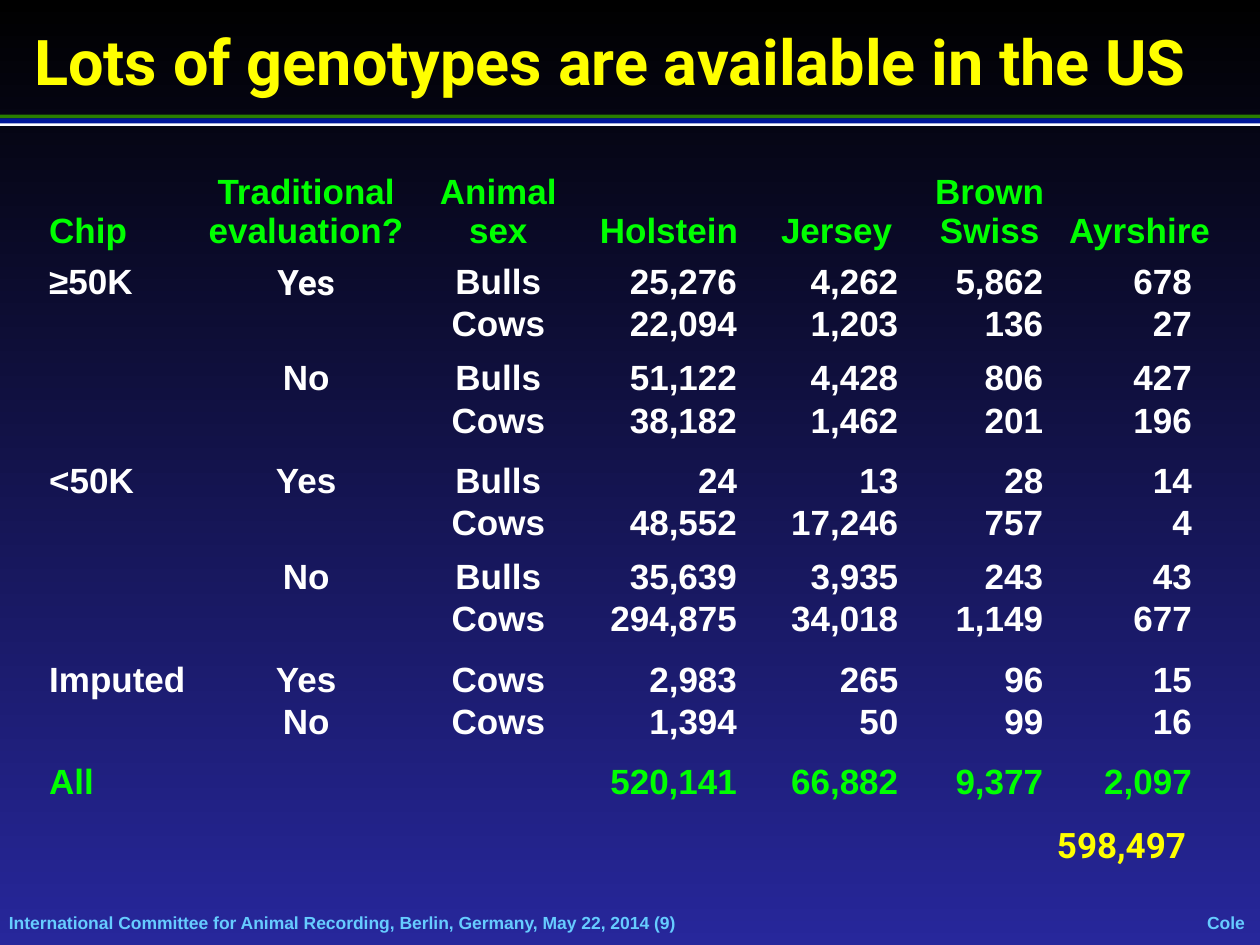
from pptx import Presentation
from pptx.dml.color import RGBColor
from pptx.enum.shapes import MSO_SHAPE
from pptx.enum.text import MSO_ANCHOR, PP_ALIGN
from pptx.util import Inches, Pt

LEFT, CENTER, RIGHT = PP_ALIGN.LEFT, PP_ALIGN.CENTER, PP_ALIGN.RIGHT
TOP, MIDDLE, BOTTOM = MSO_ANCHOR.TOP, MSO_ANCHOR.MIDDLE, MSO_ANCHOR.BOTTOM
RECTANGLE = MSO_SHAPE.RECTANGLE

COLORS = {
    "night": "000000", "indigo": "27279B", "title": "FFFF00", "heading": "00FF00",
    "body": "FFFFFF", "footer": "66CCFF", "green": "2A7E00", "blue": "001799",
}
PLAIN_TABLE = "{2D5ABB26-0587-4C30-8999-92F81FD0307C}"
UNITS_WIDE, UNITS_HIGH = 100, 75

HEADINGS = ["Chip", "Traditional evaluation?", "Animal sex", "Holstein", "Jersey",
            "Brown Swiss", "Ayrshire"]
GENOTYPES = [
    ["≥50K", "Yes", "Bulls", "25,276", "4,262", "5,862", "678"],
    ["", "", "Cows", "22,094", "1,203", "136", "27"],
    ["", "No", "Bulls", "51,122", "4,428", "806", "427"],
    ["", "", "Cows", "38,182", "1,462", "201", "196"],
    ["<50K", "Yes", "Bulls", "24", "13", "28", "14"],
    ["", "", "Cows", "48,552", "17,246", "757", "4"],
    ["", "No", "Bulls", "35,639", "3,935", "243", "43"],
    ["", "", "Cows", "294,875", "34,018", "1,149", "677"],
    ["Imputed", "Yes", "Cows", "2,983", "265", "96", "15"],
    ["", "No", "Cows", "1,394", "50", "99", "16"],
]
TOTALS = ["All", "", "", "520,141", "66,882", "9,377", "2,097"]
COLUMN_WIDTHS = [12.3, 16.2, 14.3, 13.3, 12.8, 12, 11.3]
COLUMN_ALIGNS = [LEFT, CENTER, CENTER, RIGHT, RIGHT, RIGHT, RIGHT]
HEADING_INSETS = [0, 0, 0, 0.5, 0, 0.5, 0]
FIGURE_INSETS = [0, 0, 0, 1.5, 1.5, 2, 1.5]
HEADING_HEIGHT, LINE_HEIGHT = 7.4, 3.3
GAPS_BELOW = [0, 1, 0, 1.5, 0, 1, 0, 1.5, 0, 1.5, 0]


def rgb(name):
    """Look up a palette colour."""
    return RGBColor.from_string(COLORS[name])


def write(frame, text, size=20, color="body", font="Arial", align=LEFT):
    """Fill a text frame with one bold formatted paragraph."""
    paragraph = frame.paragraphs[0]
    paragraph.alignment = align
    run = paragraph.add_run()
    run.text = text
    run.font.size, run.font.name, run.font.bold = Pt(size), font, True
    run.font.color.rgb = rgb(color)


class Deck:
    """Holds the presentation, its grid and the current slide."""

    def __init__(self):
        """Open a presentation with a title-only slide."""
        self.presentation = Presentation()
        self.presentation.slide_width = Inches(10)
        self.presentation.slide_height = Inches(7.5)
        layout = self.presentation.slide_layouts[5]
        self.slide = self.presentation.slides.add_slide(layout)

    def across(self, units):
        """Turn grid columns into a length."""
        return round(self.presentation.slide_width * units / UNITS_WIDE)

    def down(self, units):
        """Turn grid rows into a length."""
        return round(self.presentation.slide_height * units / UNITS_HIGH)

    def box(self, left, top, width, height):
        """Turn a grid box into lengths."""
        return self.across(left), self.down(top), self.across(width), self.down(height)

    def background(self, upper, lower):
        """Shade the slide from top to bottom."""
        fill = self.slide.background.fill
        fill.gradient()
        fill.gradient_angle = 270
        for stop, color in zip(fill.gradient_stops, (upper, lower)):
            stop.color.rgb = rgb(color)

    def title(self, text, place):
        """Move and fill the title placeholder."""
        heading = self.slide.shapes.title
        heading.left, heading.top, heading.width, heading.height = self.box(*place)
        heading.text_frame.vertical_anchor = MIDDLE
        write(heading.text_frame, text, size=36, color="title", font="Roboto")

    def stripe(self, top, height, color):
        """Draw a band across the slide."""
        band = self.slide.shapes.add_shape(RECTANGLE, *self.box(0, top, UNITS_WIDE, height))
        band.shadow.inherit = False
        band.fill.solid()
        band.fill.fore_color.rgb = rgb(color)
        band.line.fill.background()

    def label(self, text, place, inset=True, anchor=TOP, wrap=True, **style):
        """Place a free line of text."""
        frame = self.slide.shapes.add_textbox(*self.box(*place)).text_frame
        frame.word_wrap = wrap
        frame.vertical_anchor = anchor
        if not inset:
            frame.margin_left = frame.margin_right = 0
            frame.margin_top = frame.margin_bottom = 0
        write(frame, text, **style)

    def table(self, rows, left, top, widths, heights):
        """Add a plain table and return its cells by row."""
        place = self.box(left, top, sum(widths), sum(heights))
        grid = self.slide.shapes.add_table(rows, len(widths), *place).table
        grid.first_row = grid.horz_banding = False
        grid._tbl.tblPr[0].text = PLAIN_TABLE
        for column, width in zip(grid.columns, widths):
            column.width = self.across(width)
        for row, height in zip(grid.rows, heights):
            row.height = self.down(height)
        return [list(row.cells) for row in grid.rows]

    def cell(self, cell, text, right=0, bottom=0, anchor=TOP, **style):
        """Format and fill one table cell."""
        cell.fill.background()
        cell.margin_left = cell.margin_top = 0
        cell.margin_right, cell.margin_bottom = self.across(right), self.down(bottom)
        cell.vertical_anchor = anchor
        if text:
            write(cell.text_frame, text, **style)


def genotype_table(deck):
    """Build the table of genotype counts."""
    body = GENOTYPES + [TOTALS]
    heights = [HEADING_HEIGHT] + [LINE_HEIGHT + gap for gap in GAPS_BELOW]
    header, *lines = deck.table(len(body) + 1, 3.9, 13.2, COLUMN_WIDTHS, heights)
    for index, (cell, text) in enumerate(zip(header, HEADINGS)):
        deck.cell(cell, text, right=HEADING_INSETS[index], bottom=1, anchor=BOTTOM,
                  color="heading", align=CENTER if index else LEFT)
    for number, (cells, texts) in enumerate(zip(lines, body)):
        color = "heading" if texts is TOTALS else "body"
        for index, (cell, text) in enumerate(zip(cells, texts)):
            font = "Roboto" if (number, index) == (0, 1) else "Arial"
            deck.cell(cell, text, right=FIGURE_INSETS[index], color=color, font=font,
                      align=COLUMN_ALIGNS[index])


def main():
    """Build and save the slide."""
    deck = Deck()
    deck.background("night", "indigo")
    footer = {"inset": False, "anchor": MIDDLE, "size": 10, "color": "footer"}
    deck.label("International Committee for Animal Recording, Berlin, Germany, "
               "May 22, 2014 (9)", (0.7, 72.4, 80.9, 1.7), **footer)
    deck.label("Cole", (95.8, 72.4, 3, 1.7), wrap=False, align=CENTER, **footer)
    for top, height, color in [(9.1, 0.3, "green"), (9.7, 0.3, "body"), (9.4, 0.4, "blue")]:
        deck.stripe(top, height, color)
    genotype_table(deck)
    deck.label("598,497", (82.9, 64.9, 14.2, 4.4), color="title", font="Roboto")
    deck.title("Lots of genotypes are available in the US", (1.7, 1.3, 97.5, 7))
    deck.presentation.save("out.pptx")


if __name__ == "__main__":
    main()
